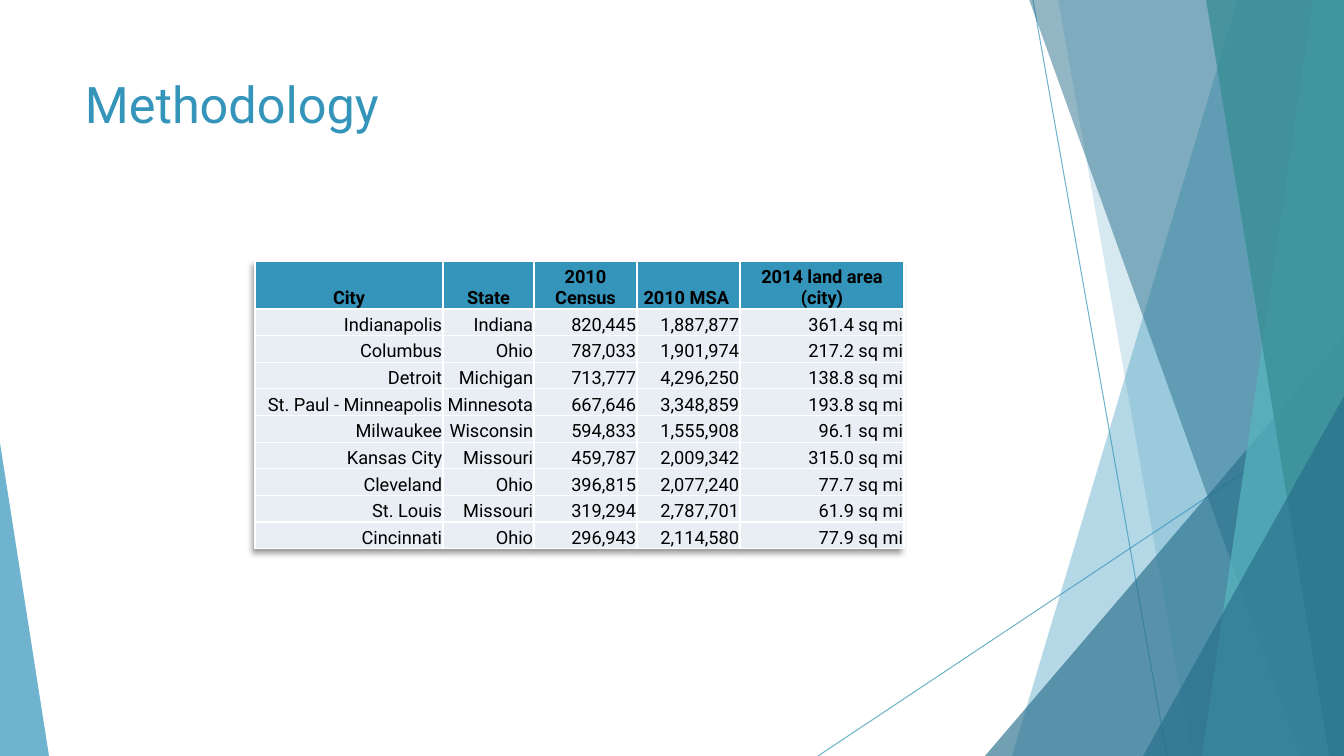
import lxml.etree
import pptx
import pptx.dml.color
import pptx.enum.shapes
import pptx.enum.text
import pptx.oxml.ns
import pptx.util

RGB = pptx.dml.color.RGBColor
BLUE = RGB(0x34, 0x94, 0xBA)
NAVY = RGB(0x27, 0x6F, 0x8B)
AQUA = RGB(0x58, 0xB6, 0xC0)
TEAL = RGB(0x3A, 0x8F, 0x98)
PALE = RGB(0xE8, 0xEE, 0xF3)
WHITE = RGB(0xFF, 0xFF, 0xFF)
BLACK = RGB(0, 0, 0)

WIDE, HIGH = 1344, 756
HEAD = ["City", "State", "2010 Census", "2010 MSA ", "2014 land area (city)"]
CITIES = [
    ("Indianapolis", "Indiana", "820,445", "1,887,877", "361.4"),
    ("Columbus", "Ohio", "787,033", "1,901,974", "217.2"),
    ("Detroit", "Michigan", "713,777", "4,296,250", "138.8"),
    ("St. Paul - Minneapolis", "Minnesota", "667,646", "3,348,859", "193.8"),
    ("Milwaukee", "Wisconsin", "594,833", "1,555,908", "96.1"),
    ("Kansas City", "Missouri", "459,787", "2,009,342", "315.0"),
    ("Cleveland", "Ohio", "396,815", "2,077,240", "77.7"),
    ("St. Louis", "Missouri", "319,294", "2,787,701", "61.9"),
    ("Cincinnati", "Ohio", "296,943", "2,114,580", "77.9"),
]


def node(root, tag, **vals):
    return lxml.etree.SubElement(root, pptx.oxml.ns.qn(tag), vals)


def put(item, vals):
    for name, val in vals.items():
        setattr(item, name, val)


class Deck:
    font = "Roboto"
    scale = 12192000 / WIDE

    def __init__(self):
        self.show = pptx.Presentation()
        put(self.show, {"slide_width": self.px(WIDE), "slide_height": self.px(HIGH)})
        self.slide = self.show.slides.add_slide(self.show.slide_layouts[6])
        self.shapes = self.slide.shapes

    def px(self, size):
        return pptx.util.Emu(round(size * self.scale))

    def fade(self, shape, alpha):
        for color in list(shape.element.iter(pptx.oxml.ns.qn("a:srgbClr"))):
            node(color, "a:alpha", val=str(alpha * 1000))

    def paint(self, shape, color, alpha):
        shape.shadow.inherit = False
        shape.fill.solid()
        shape.fill.fore_color.rgb = color
        shape.line.fill.background()
        self.fade(shape, alpha)

    def line(self, *ends):
        line = self.shapes.add_connector(
            pptx.enum.shapes.MSO_CONNECTOR.STRAIGHT, *map(self.px, ends))
        line.line.width = pptx.util.Pt(0.75)
        line.line.color.rgb = BLUE
        node(line.element.spPr, "a:effectLst")
        self.fade(line, 70)

    def band(self, top, base, color, alpha):
        pen = self.shapes.build_freeform(top, -1, scale=self.scale)
        pen.add_line_segments([(WIDE, -1), (WIDE, HIGH), (base, HIGH)], close=True)
        self.paint(pen.convert_to_shape(), color, alpha)

    def wedge(self, left, top, width, peak, color, alpha):
        box = map(self.px, (left, top, width, HIGH - top))
        shape = self.shapes.add_shape(
            pptx.enum.shapes.MSO_SHAPE.ISOSCELES_TRIANGLE, *box)
        shape.adjustments[0] = peak
        self.paint(shape, color, alpha)

    def label(self, frame, text, size, color, align, bold=False):
        para = frame.paragraphs[0]
        para.alignment = align
        run = para.add_run()
        run.text = text
        put(run.font, {"name": self.font, "size": pptx.util.Pt(size), "bold": bold})
        run.font.color.rgb = color

    def title(self, text, *box):
        frame = self.shapes.add_textbox(*map(self.px, box)).text_frame
        put(frame, {"word_wrap": True,
                    "vertical_anchor": pptx.enum.text.MSO_ANCHOR.TOP})
        self.label(frame, text, 36, BLUE, pptx.enum.text.PP_ALIGN.LEFT)

    def cell(self, cell, text, head):
        put(cell, {"margin_left": self.px(1), "margin_right": self.px(1),
                   "margin_top": self.px(1), "margin_bottom": 0,
                   "vertical_anchor": pptx.enum.text.MSO_ANCHOR.BOTTOM})
        props = cell._tc.get_or_add_tcPr()
        for side in "LRTB":
            edge = node(props, f"a:ln{side}", w="12700")
            node(node(edge, "a:solidFill"), "a:srgbClr", val=str(WHITE))
        cell.fill.solid()
        cell.fill.fore_color.rgb = BLUE if head else PALE
        ways = pptx.enum.text.PP_ALIGN
        self.label(cell.text_frame, text, 13, BLACK,
                   ways.CENTER if head else ways.RIGHT, head)

    def table(self, left, top, widths, first, body, rows):
        box = map(self.px, (left, top, sum(widths), first + body))
        frame = self.shapes.add_table(len(rows), len(widths), *box)
        table = frame.table
        put(table, {"first_row": True, "horz_banding": False})
        for col, width in zip(table.columns, widths):
            col.width = self.px(width)
        for r, row in enumerate(rows):
            table.rows[r].height = self.px(body / (len(rows) - 1) if r else first)
            for c, text in enumerate(row):
                self.cell(table.cell(r, c), text, r == 0)
        self.shade(table)

    def shade(self, table):
        props = table._tbl.tblPr
        glow = node(props, "a:effectLst")
        props.insert(0, glow)
        cast = node(glow, "a:outerShdw", blurRad="50800", dist="38100",
                    dir="8100000", algn="tr", rotWithShape="0")
        node(node(cast, "a:srgbClr", val=str(BLACK)), "a:alpha", val="40000")


def main():
    deck = Deck()
    deck.line(1033, 0, 1167, HIGH)
    deck.line(WIDE, 406, 818, HIGH)
    deck.band(1238, 1012, BLUE, 36)
    deck.band(1058, 1192, BLUE, 20)
    deck.wedge(985, 336, 359, 1, NAVY, 66)
    deck.band(1029, 1301, NAVY, 50)
    deck.band(1313, 1202, AQUA, 70)
    deck.band(1206, 1329, TEAL, 80)
    deck.wedge(1143, 396, 201, 1, NAVY, 66)
    deck.wedge(0, 443, 49, 0, BLUE, 70)
    deck.title("Methodology", 75, 68, 948, 145)
    rows = [HEAD] + [(*row, f"{area} sq mi") for *row, area in CITIES]
    deck.table(255, 261, [188, 91, 103, 103, 164], 48, 240, rows)
    deck.show.save("out.pptx")


if __name__ == "__main__":
    main()
